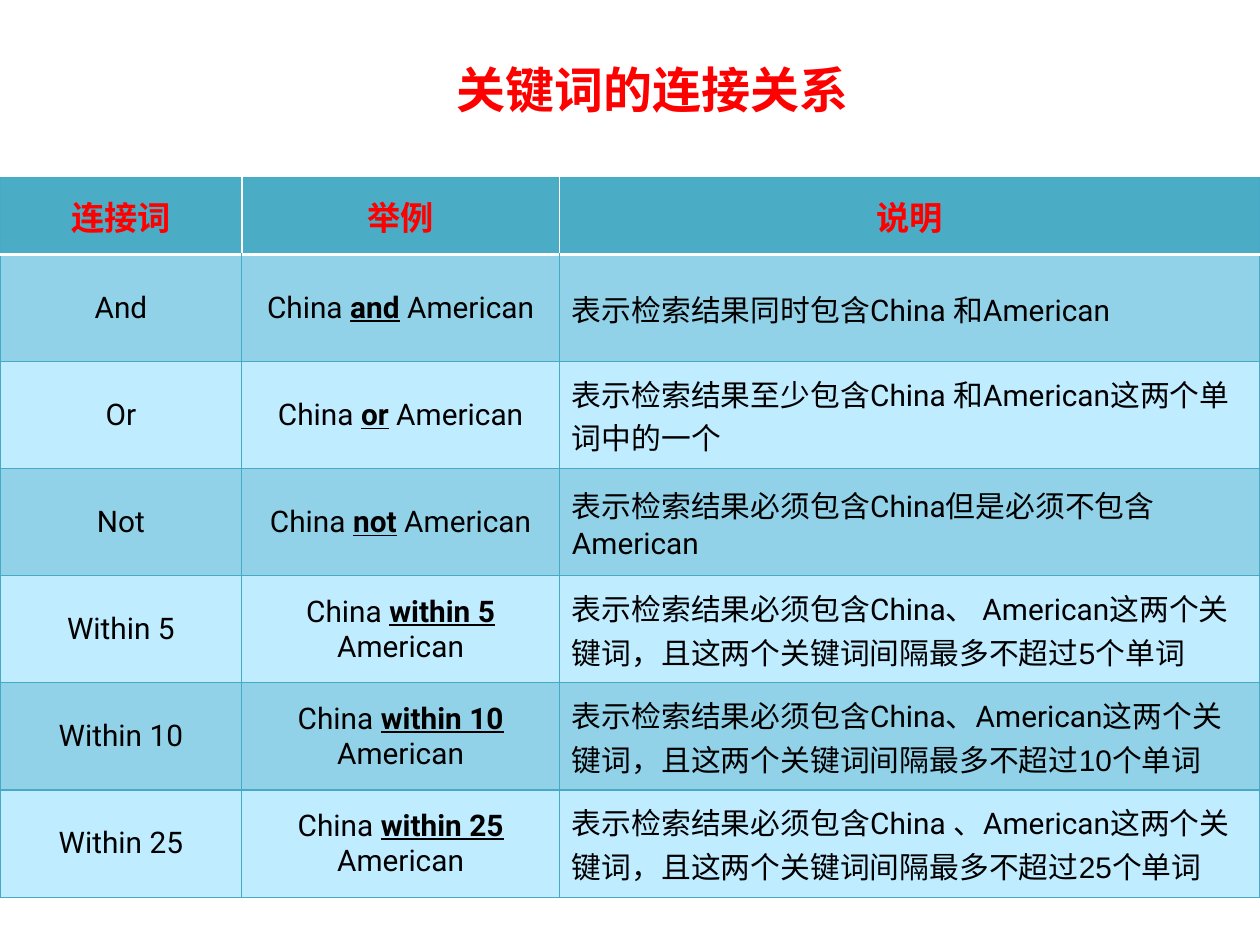
from pptx import Presentation
from pptx.dml.color import RGBColor
from pptx.enum.text import MSO_ANCHOR as Anchor, PP_ALIGN as Align
from pptx.oxml.ns import qn
from pptx.util import Inches, Pt
from lxml.etree import SubElement

RED = RGBColor(0xFF, 0x00, 0x00)
BLACK = RGBColor(0x00, 0x00, 0x00)
WHITE = RGBColor(0xFF, 0xFF, 0xFF)
HEADER_TEAL = RGBColor(0x4B, 0xAC, 0xC6)
GRID_TEAL = RGBColor(0x46, 0xAA, 0xC5)
BAND_DARK = RGBColor(0x92, 0xD2, 0xE8)
BAND_LIGHT = RGBColor(0xBF, 0xEC, 0xFF)
ROBOTO, TIMES, ARIAL, CJK = "Roboto", "Times New Roman", "Arial", "Noto Sans CJK SC"


def add_run(paragraph, text, font, size, color, bold=False, underline=False):
    run = paragraph.add_run()
    run.text = text
    run.font.name = font
    run.font.size = Pt(size)
    run.font.bold = bold
    run.font.underline = underline
    run.font.color.rgb = color
    SubElement(run.font._element, qn("a:ea"), typeface=CJK)


def add_border(cell, side, color, width):
    line = SubElement(cell._tc.get_or_add_tcPr(), qn(f"a:ln{side}"), w=str(Pt(width)))
    SubElement(SubElement(line, qn("a:solidFill")), qn("a:srgbClr"), val=str(color))


headings = ["连接词", "举例", "说明"]
must_contain = ("表示检索结果必须包含", TIMES)
both_keywords = "这两个关键词，且这两个关键词间隔最多不超过"
connectors = [
    ("And", [("表示检索结果同时包含", TIMES), ("China ", ROBOTO), ("和", TIMES),
             ("American", ROBOTO)]),
    ("Or", [("表示检索结果至少包含", TIMES), ("China ", ROBOTO), ("和", TIMES),
            ("American", ROBOTO), ("这两个单词中的一个", TIMES)]),
    ("Not", [must_contain, ("China", ROBOTO), ("但是必须不包含", TIMES),
             ("American", ROBOTO)]),
    ("Within 5", [("表示", ARIAL), ("检索结果", TIMES), ("必须包含", ARIAL),
                  ("China、 American", ROBOTO), (both_keywords + "5个单词", ARIAL)]),
    ("Within 10", [must_contain, ("China、American", ROBOTO), (both_keywords, TIMES),
                   ("10", ARIAL), ("个单词", TIMES)]),
    ("Within 25", [must_contain, ("China ", ROBOTO), ("、", ARIAL), ("American", ROBOTO),
                   (both_keywords, TIMES), ("25", ARIAL), ("个单词", TIMES)]),
]

prs = Presentation()
prs.slide_width, prs.slide_height = Inches(10), Inches(7.5)
slide = prs.slides.add_slide(prs.slide_layouts[6])

table = slide.shapes.add_table(len(connectors) + 1, len(headings), Inches(0), Inches(1.41),
                               Inches(10), Inches(5.71)).table
for column, width in zip(table.columns, [1.92, 2.52, 5.56]):
    column.width = Inches(width)
for row_index, row in enumerate(table.rows):
    row.height = Inches(0.85 if row_index else 0.61)
    if row_index == 0:
        fill = HEADER_TEAL
    else:
        fill = BAND_DARK if row_index % 2 else BAND_LIGHT
    for column_index, cell in enumerate(row.cells):
        cell.vertical_anchor = Anchor.MIDDLE
        cell.margin_left = cell.margin_right = Inches(0.1)
        cell.margin_top = cell.margin_bottom = Inches(0.06)
        for side in "LRTB":
            under_header = (row_index, side) in [(0, "B"), (1, "T")]
            inside_header = row_index == 0 and (column_index, side) in [
                (0, "R"), (1, "L"), (1, "R"), (2, "L")]
            if not inside_header:
                add_border(cell, side, WHITE if under_header else GRID_TEAL,
                           2 if under_header else 0.75)
        cell.fill.solid()
        cell.fill.fore_color.rgb = fill
        if row_index == 0 or column_index < 2:
            cell.text_frame.paragraphs[0].alignment = Align.CENTER

for column_index, heading in enumerate(headings):
    add_run(table.cell(0, column_index).text_frame.paragraphs[0], heading, TIMES, 19, RED, bold=True)

for row_index, (word, explanation) in enumerate(connectors, start=1):
    name, example, meaning = [table.cell(row_index, i).text_frame.paragraphs[0] for i in range(3)]
    add_run(name, word, ROBOTO, 17, BLACK)
    add_run(example, "China ", ROBOTO, 17, BLACK)
    add_run(example, word.lower(), ROBOTO, 17, BLACK, bold=True, underline=True)
    add_run(example, " American", ROBOTO, 17, BLACK)
    for text, font in explanation:
        add_run(meaning, text, font, 17, BLACK)

title = slide.shapes.add_textbox(Inches(3.42), Inches(0.42), Inches(3.52), Inches(0.57))
title.text_frame.word_wrap = True
title_line = title.text_frame.paragraphs[0]
title_line.alignment = Align.CENTER
add_run(title_line, "关键词的连接关系", CJK, 28, RED, bold=True)

prs.save("out.pptx")
